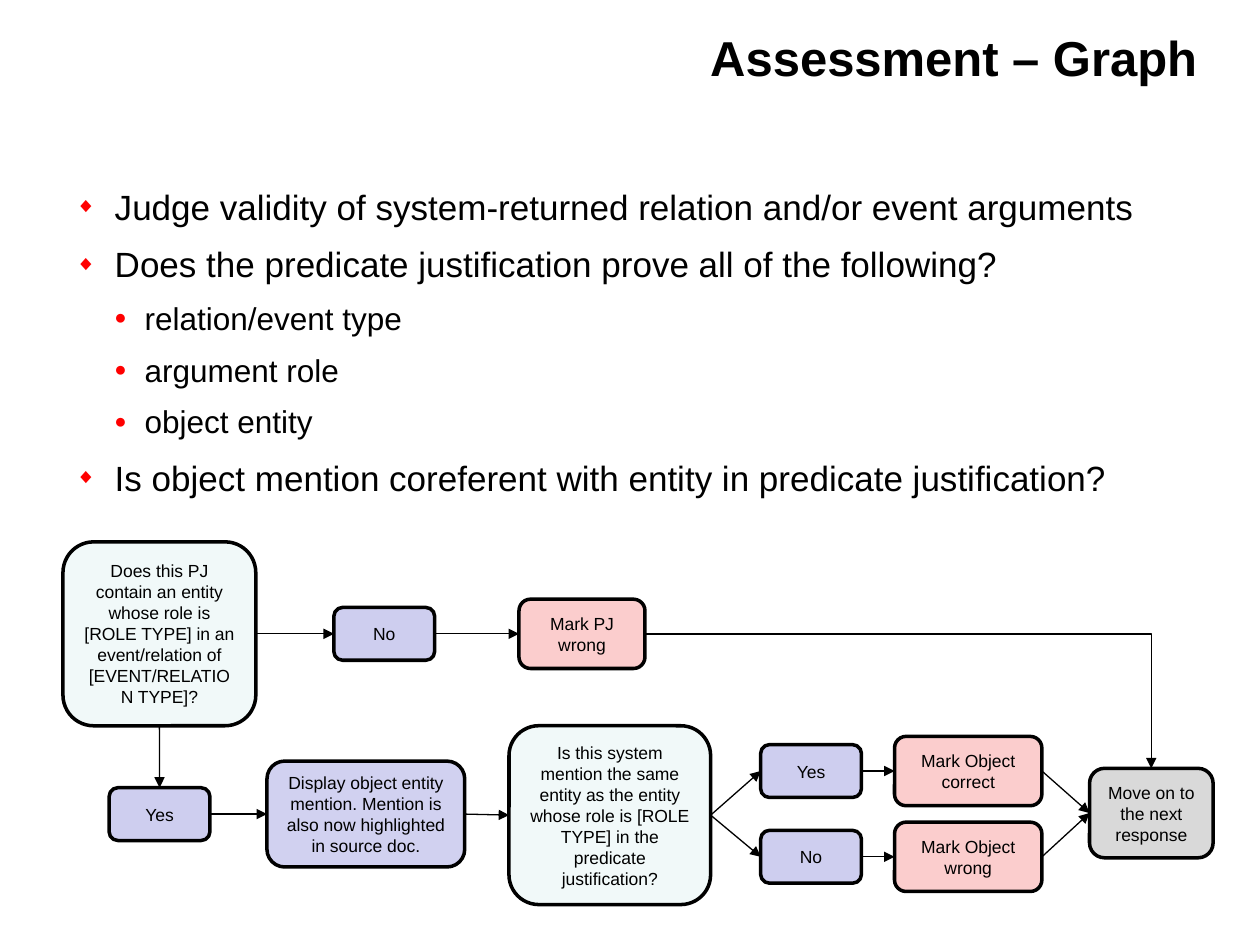
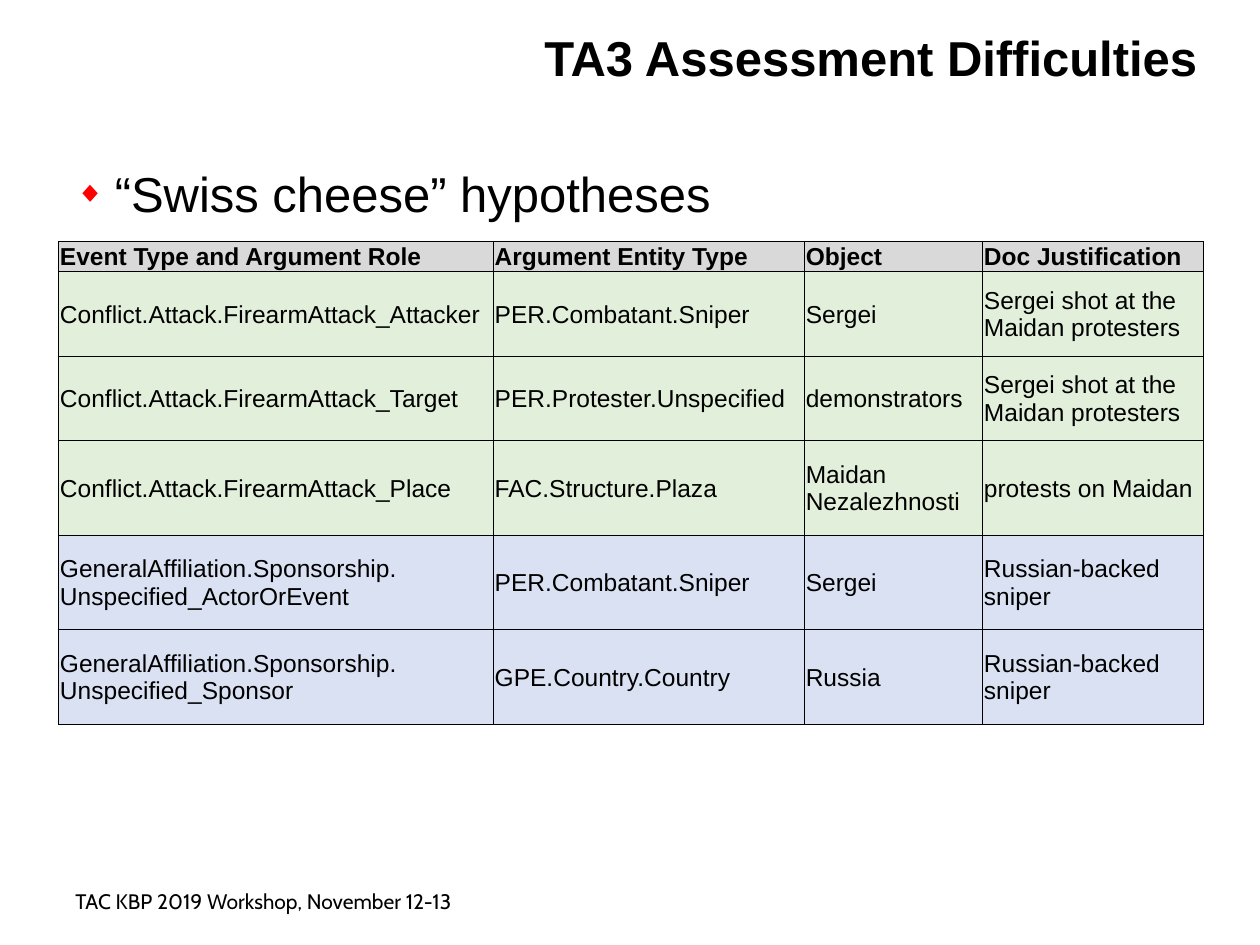
"""Build two slides on assessing graph responses: a decision flow and a table of hypotheses."""
from dataclasses import dataclass
from typing import NamedTuple

from lxml.etree import SubElement
from pptx import Presentation
from pptx.dml.color import RGBColor
from pptx.enum.shapes import MSO_CONNECTOR as Link, MSO_SHAPE as Preset
from pptx.enum.text import MSO_ANCHOR as Anchor, MSO_AUTO_SIZE as AutoSize, PP_ALIGN as Align
from pptx.oxml.ns import qn
from pptx.util import Pt


@dataclass(frozen=True)
class Theme:
    font: str = "Arial"
    footer_font: str = "Cabin"
    ink: str = "000000"
    bullet: str = "FF0000"
    question: str = "F1F9F9"
    answer: str = "CECEEF"
    display: str = "D1D1F0"
    verdict: str = "FBCDCD"
    neutral: str = "D9D9D9"
    attack: str = "E2EFDA"
    affiliation: str = "D9E1F2"
    title_size: float = 28
    item_size: float = 20
    subitem_size: float = 18
    cell_size: float = 14
    footer_size: float = 12
    node_size: float = 10
    node_line: float = 2
    arrow_line: float = 0.75
    border_line: float = 0.5


class Area(NamedTuple):
    left: float
    top: float
    width: float
    height: float

    def lengths(self) -> list:
        return [Pt(value) for value in self]


class Node(NamedTuple):
    text: str
    fill: str
    left: float
    middle: float
    width: float
    height: float


class Arrow(NamedTuple):
    start: str
    end: str
    start_side: int = 3
    end_side: int = 1


class Bullet(NamedTuple):
    char: str
    percent: int
    margin: float
    hanging: float
    space_before: float


class Item(NamedTuple):
    text: str
    size: float
    bullet: Bullet


class Row(NamedTuple):
    height: float
    fill: str
    cells: tuple


THEME = Theme()
TITLE_AREA = Area(264.2, 15.8, 419.8, 62.6)
DIAMOND = Bullet("◆", 60, 22.5, 22.5, 9)
DOT = Bullet("●", 65, 39.6, 17.3, 8)

ITEMS = (
    Item("Judge validity of system-returned relation and/or event arguments", THEME.item_size, DIAMOND),
    Item("Does the predicate justification prove all of the following?", THEME.item_size, DIAMOND),
    Item("relation/event type", THEME.subitem_size, DOT),
    Item("argument role", THEME.subitem_size, DOT),
    Item("object entity", THEME.subitem_size, DOT),
    Item("Is object mention coreferent with entity in predicate justification?", THEME.item_size, DIAMOND),
)

TOP_LANE, LOW_LANE = 362.2, 465.2
YES_LANE, NO_LANE = 440.6, 489.6
ANSWER_SIZE = (57.6, 30.2)
OBJECT_SIZE = (84.2, 39.6)

NODES = {
    "role question": Node("Does this PJ contain an entity whose role is [ROLE TYPE] in an event/relation of "
                          "[EVENT/RELATION TYPE]?", THEME.question, 36, TOP_LANE, 110.2, 105.1),
    "role no": Node("No", THEME.answer, 190.8, TOP_LANE, *ANSWER_SIZE),
    "PJ wrong": Node("Mark PJ wrong", THEME.verdict, 296.6, TOP_LANE, 72, 39.6),
    "role yes": Node("Yes", THEME.answer, 62.4, LOW_LANE, *ANSWER_SIZE),
    "display": Node("Display object entity mention. Mention is also now highlighted in source doc.",
                    THEME.display, 152.6, LOW_LANE, 113, 60.5),
    "same question": Node("Is this system mention the same entity as the entity whose role is [ROLE TYPE] "
                          "in the predicate justification?", THEME.question, 290.9, 465.8, 115.2, 102.2),
    "same yes": Node("Yes", THEME.answer, 434.7, YES_LANE, *ANSWER_SIZE),
    "same no": Node("No", THEME.answer, 434.7, NO_LANE, *ANSWER_SIZE),
    "object correct": Node("Mark Object correct", THEME.verdict, 511.2, YES_LANE, *OBJECT_SIZE),
    "object wrong": Node("Mark Object wrong", THEME.verdict, 511.2, NO_LANE, *OBJECT_SIZE),
    "next": Node("Move on to the next response", THEME.neutral, 622.6, 464.6, 70.6, 51.1),
}

ARROWS = (
    Arrow("role question", "role no"),
    Arrow("role no", "PJ wrong"),
    Arrow("role question", "role yes", 2, 0),
    Arrow("role yes", "display"),
    Arrow("display", "same question"),
    Arrow("same question", "same yes"),
    Arrow("same question", "same no"),
    Arrow("same yes", "object correct"),
    Arrow("same no", "object wrong"),
    Arrow("object correct", "next"),
    Arrow("object wrong", "next"),
    Arrow("PJ wrong", "next", 3, 0),
)

TABLE_LEFT, TABLE_TOP = 33.6, 138
COLUMN_WIDTHS = (248.4, 177.8, 101.8, 126)
ROWS = (
    Row(17.3, THEME.neutral,
        ("Event Type and Argument Role", "Argument Entity Type", "Object", "Doc Justification")),
    Row(48.3, THEME.attack, ("Conflict.Attack.FirearmAttack_Attacker", "PER.Combatant.Sniper",
                             "Sergei", "Sergei shot at the Maidan protesters")),
    Row(48.3, THEME.attack, ("Conflict.Attack.FirearmAttack_Target", "PER.Protester.Unspecified",
                             "demonstrators", "Sergei shot at the Maidan protesters")),
    Row(54, THEME.attack, ("Conflict.Attack.FirearmAttack_Place", "FAC.Structure.Plaza",
                           "Maidan Nezalezhnosti", "protests on Maidan")),
    Row(54, THEME.affiliation, ("GeneralAffiliation.Sponsorship. Unspecified_ActorOrEvent",
                                "PER.Combatant.Sniper", "Sergei", "Russian-backed sniper")),
    Row(54, THEME.affiliation, ("GeneralAffiliation.Sponsorship. Unspecified_Sponsor",
                                "GPE.Country.Country", "Russia", "Russian-backed sniper")),
)


def color(value: str) -> RGBColor:
    return RGBColor.from_string(value)


def style(para, size: float, align=Align.LEFT, bold: bool = False, font: str = THEME.font) -> None:
    para.alignment = align
    para.font.name = font
    para.font.size = Pt(size)
    para.font.bold = bold
    para.font.color.rgb = color(THEME.ink)


def add_titled_page(deck, title: str):
    page = deck.slides.add_slide(deck.slide_layouts[5])
    box = page.shapes.title
    box.left, box.top, box.width, box.height = TITLE_AREA.lengths()
    frame = box.text_frame
    frame.text = title
    frame.auto_size = AutoSize.NONE
    frame.vertical_anchor = Anchor.TOP
    frame.margin_left = frame.margin_top = frame.margin_right = frame.margin_bottom = 0
    style(frame.paragraphs[0], THEME.title_size, Align.RIGHT, bold=True)
    return page


def add_text_frame(page, area: Area):
    frame = page.shapes.add_textbox(*area.lengths()).text_frame
    frame.word_wrap = True
    return frame


def set_bullet(para, bullet: Bullet) -> None:
    props = para._p.get_or_add_pPr()
    props.set("marL", str(Pt(bullet.margin)))
    props.set("indent", str(-Pt(bullet.hanging)))
    SubElement(SubElement(props, qn("a:buClr")), qn("a:srgbClr"), val=THEME.bullet)
    SubElement(props, qn("a:buSzPct"), val=str(bullet.percent * 1000))
    SubElement(props, qn("a:buFont"), typeface=THEME.font)
    SubElement(props, qn("a:buChar"), char=bullet.char)


def add_bullets(page, area: Area, items: tuple) -> None:
    frame = add_text_frame(page, area)
    for index, item in enumerate(items):
        para = frame.add_paragraph() if index else frame.paragraphs[0]
        para.text = item.text
        set_bullet(para, item.bullet)
        para.space_before = Pt(item.bullet.space_before if index else 0)
        style(para, item.size)


def add_node(page, node: Node):
    area = Area(node.left, node.middle - node.height / 2, node.width, node.height)
    box = page.shapes.add_shape(Preset.ROUNDED_RECTANGLE, *area.lengths())
    box.shadow.inherit = False
    box.fill.solid()
    box.fill.fore_color.rgb = color(node.fill)
    box.line.color.rgb = color(THEME.ink)
    box.line.width = Pt(THEME.node_line)
    frame = box.text_frame
    frame.word_wrap = True
    frame.vertical_anchor = Anchor.MIDDLE
    frame.text = node.text
    style(frame.paragraphs[0], THEME.node_size, Align.CENTER)
    return box


def add_arrow(page, boxes: dict, arrow: Arrow) -> None:
    bent = arrow.start_side == 3 and arrow.end_side == 0
    link = page.shapes.add_connector(Link.ELBOW if bent else Link.STRAIGHT, 0, 0, 0, 0)
    link.begin_connect(boxes[arrow.start], arrow.start_side)
    link.end_connect(boxes[arrow.end], arrow.end_side)
    link.line.color.rgb = color(THEME.ink)
    link.line.width = Pt(THEME.arrow_line)
    props = link._element.spPr
    if bent:
        props.find(qn("a:prstGeom")).set("prst", "bentConnector2")
    SubElement(props.find(qn("a:ln")), qn("a:tailEnd"), type="triangle")
    SubElement(props, qn("a:effectLst"))


def set_borders(cell) -> None:
    props = cell._tc.get_or_add_tcPr()
    for side in ("a:lnL", "a:lnR", "a:lnT", "a:lnB"):
        line = SubElement(props, qn(side), w=str(Pt(THEME.border_line)))
        SubElement(SubElement(line, qn("a:solidFill")), qn("a:srgbClr"), val=THEME.ink)


def add_grid(page, rows: tuple) -> None:
    area = Area(TABLE_LEFT, TABLE_TOP, sum(COLUMN_WIDTHS), sum(row.height for row in rows))
    table = page.shapes.add_table(len(rows), len(COLUMN_WIDTHS), *area.lengths()).table
    table.horz_banding = False
    for column, width in zip(table.columns, COLUMN_WIDTHS):
        column.width = Pt(width)
    for index, row in enumerate(rows):
        table.rows[index].height = Pt(row.height)
        for cell, text in zip(table.rows[index].cells, row.cells):
            cell.text = text
            cell.vertical_anchor = Anchor.MIDDLE
            cell.margin_left = cell.margin_top = cell.margin_right = Pt(0.7)
            cell.margin_bottom = 0
            set_borders(cell)
            cell.fill.solid()
            cell.fill.fore_color.rgb = color(row.fill)
            style(cell.text_frame.paragraphs[0], THEME.cell_size, bold=index == 0)


def add_footer(page, text: str) -> None:
    frame = add_text_frame(page, Area(36, 504, 480, 25.2))
    frame.text = text
    style(frame.paragraphs[0], THEME.footer_size, font=THEME.footer_font)


def build_graph_page(deck) -> None:
    page = add_titled_page(deck, "Assessment – Graph")
    boxes = {name: add_node(page, node) for name, node in NODES.items()}
    for arrow in ARROWS:
        add_arrow(page, boxes, arrow)
    add_bullets(page, Area(36, 102.2, 648, 390.2), ITEMS)


def build_difficulties_page(deck) -> None:
    page = add_titled_page(deck, "TA3 Assessment Difficulties")
    add_grid(page, ROWS)
    add_bullets(page, Area(36, 90, 666, 419.8),
                (Item("“Swiss cheese” hypotheses", THEME.title_size, DIAMOND),))
    add_footer(page, "TAC KBP 2019 Workshop, November 12-13")


def main() -> None:
    deck = Presentation()
    deck.slide_width, deck.slide_height = Pt(720), Pt(540)
    build_graph_page(deck)
    build_difficulties_page(deck)
    deck.save("out.pptx")


if __name__ == "__main__":
    main()
